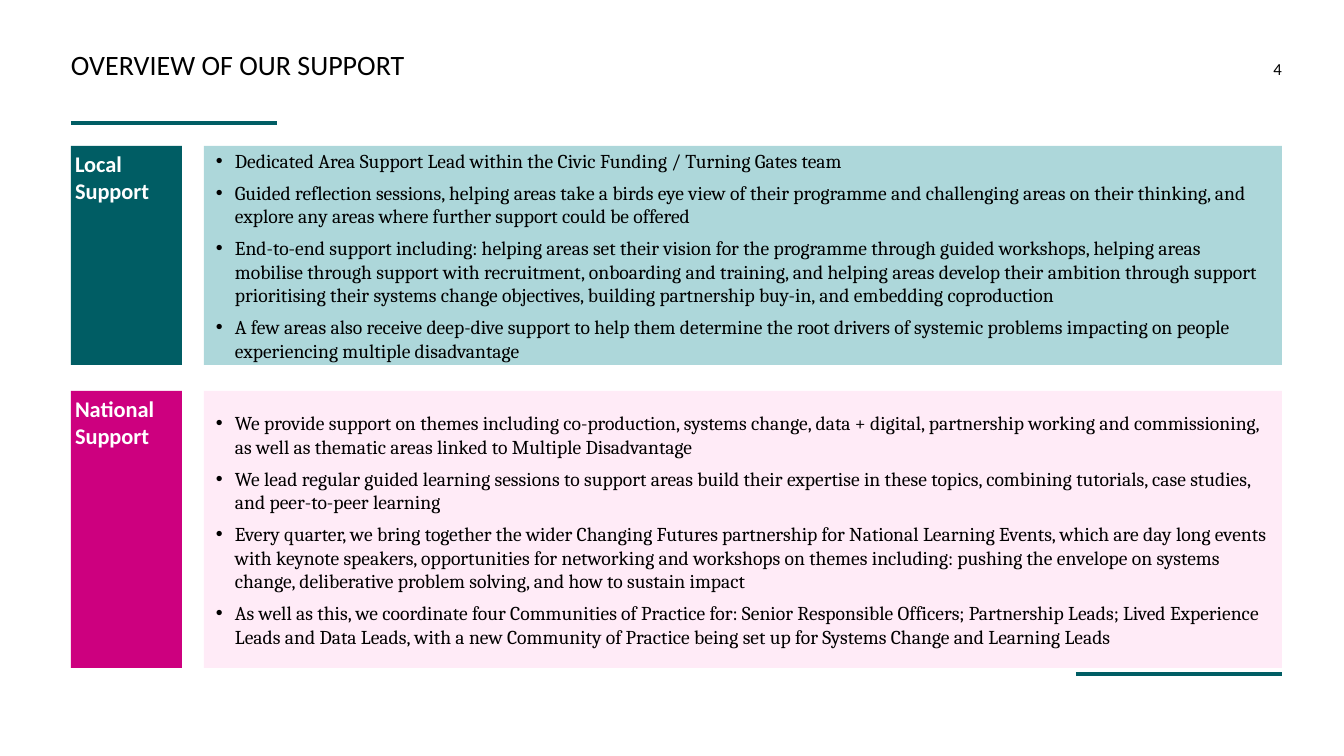
from lxml.etree import SubElement
from pptx import Presentation
from pptx.dml.color import RGBColor
from pptx.enum.shapes import MSO_CONNECTOR, MSO_SHAPE
from pptx.enum.text import MSO_ANCHOR, PP_ALIGN
from pptx.oxml.ns import qn
from pptx.util import Pt

PX = 914400 / 100.8
TEAL = RGBColor(0x00, 0x5D, 0x64)
LIGHT_TEAL = RGBColor(0x00, 0x83, 0x8D)
MAGENTA = RGBColor(0xCD, 0x00, 0x7F)
LIGHT_PINK = RGBColor(0xFF, 0xC2, 0xE8)
BLACK = RGBColor(0x00, 0x00, 0x00)
WHITE = RGBColor(0xFF, 0xFF, 0xFF)

LEFT, RIGHT = 71, 1282
LABEL_WIDTH = 111
LIST_LEFT = 204
RULE_WIDTH = 206

TITLE_FORMAT = {"name": "Calibri", "size": Pt(20), "bold": False, "color": BLACK}
NUMBER_FORMAT = {"name": "Calibri", "size": Pt(12), "bold": False, "color": BLACK}
LABEL_FORMAT = {"name": "Calibri", "size": Pt(16), "bold": True, "color": WHITE}
LIST_FORMAT = {"name": "Cambria", "size": Pt(14), "bold": False, "color": BLACK}

SECTIONS = [
    ("Local Support", 146, 219, TEAL, LIGHT_TEAL, [
        "Dedicated Area Support Lead within the Civic Funding / Turning Gates team",
        "Guided reflection sessions, helping areas take a birds eye view of their programme and "
        "challenging areas on their thinking, and explore any areas where further support could be offered",
        "End-to-end support including: helping areas set their vision for the programme through guided "
        "workshops, helping areas mobilise through support with recruitment, onboarding and training, "
        "and helping areas develop their ambition through support prioritising their systems change "
        "objectives, building partnership buy-in, and embedding coproduction",
        "A few areas also receive deep-dive support to help them determine the root drivers of systemic "
        "problems impacting on people experiencing multiple disadvantage",
    ]),
    ("National Support", 391, 277, MAGENTA, LIGHT_PINK, [
        "We provide support on themes including co-production, systems change, data + digital, partnership "
        "working and commissioning, as well as thematic areas linked to Multiple Disadvantage",
        "We lead regular guided learning sessions to support areas build their expertise in these topics, "
        "combining tutorials, case studies, and peer-to-peer learning",
        "Every quarter, we bring together the wider Changing Futures partnership for National Learning "
        "Events, which are day long events with keynote speakers, opportunities for networking and workshops "
        "on themes including: pushing the envelope on systems change, deliberative problem solving, "
        "and how to sustain impact",
        "As well as this, we coordinate four Communities of Practice for: Senior Responsible Officers; "
        "Partnership Leads; Lived Experience Leads and Data Leads, with a new Community of Practice being "
        "set up for Systems Change and Learning Leads",
    ]),
]


def px(*lengths):
    return [round(length * PX) for length in lengths]


def write_text(shape, texts, font_format, inset=0, anchor=MSO_ANCHOR.TOP,
               align=PP_ALIGN.LEFT, space_after=0, bullets=False):
    frame = shape.text_frame
    frame.word_wrap = True
    frame.vertical_anchor = anchor
    for side in ("left", "top", "right", "bottom"):
        setattr(frame, f"margin_{side}", px(inset)[0])
    for index, text in enumerate(texts):
        paragraph = frame.add_paragraph() if index else frame.paragraphs[0]
        paragraph.alignment = align
        paragraph.line_spacing = 1.0
        paragraph.space_after = Pt(space_after)
        if bullets:
            properties = paragraph._p.get_or_add_pPr()
            indent = px(19)[0]
            properties.set("marL", str(indent))
            properties.set("indent", str(-indent))
            SubElement(properties, qn("a:buFont"), typeface="Arial")
            SubElement(properties, qn("a:buChar"), char="•")
        run = paragraph.add_run()
        run.text = text
        for attribute, value in font_format.items():
            if attribute == "color":
                run.font.color.rgb = value
            else:
                setattr(run.font, attribute, value)


presentation = Presentation()
presentation.slide_width, presentation.slide_height = px(1344, 756)
slide = presentation.slides.add_slide(presentation.slide_layouts[5])

for rule_left, rule_top in ((LEFT, 123), (RIGHT - RULE_WIDTH, 674)):
    rule = slide.shapes.add_connector(
        MSO_CONNECTOR.STRAIGHT, *px(rule_left, rule_top, rule_left + RULE_WIDTH, rule_top))
    rule.line.color.rgb = TEAL
    rule.line.width = Pt(2.25)
    SubElement(rule._element.spPr, qn("a:effectLst"))

title = slide.shapes.title
title.left, title.top, title.width, title.height = px(LEFT, 47, RIGHT - LEFT, 72)
write_text(title, ["OVERVIEW OF OUR SUPPORT"], TITLE_FORMAT)

page_number = slide.shapes.add_textbox(*px(RIGHT - 38, 59, 38, 40))
write_text(page_number, ["4"], NUMBER_FORMAT, align=PP_ALIGN.RIGHT)

for label, top, height, label_color, list_color, items in SECTIONS:
    label_box = slide.shapes.add_shape(MSO_SHAPE.RECTANGLE, *px(LEFT, top, LABEL_WIDTH, height))
    list_box = slide.shapes.add_shape(
        MSO_SHAPE.RECTANGLE, *px(LIST_LEFT, top, RIGHT - LIST_LEFT, height))
    for shape, color in ((label_box, label_color), (list_box, list_color)):
        shape.shadow.inherit = False
        shape.fill.solid()
        shape.fill.fore_color.rgb = color
        shape.line.fill.background()
    list_fill = list_box._element.spPr.find(qn("a:solidFill"))
    SubElement(list_fill[0], qn("a:alpha"), val="32000")
    write_text(label_box, [label], LABEL_FORMAT, inset=4, space_after=6)
    write_text(list_box, items, LIST_FORMAT, inset=12, anchor=MSO_ANCHOR.MIDDLE,
               space_after=6, bullets=True)

presentation.save("out.pptx")
